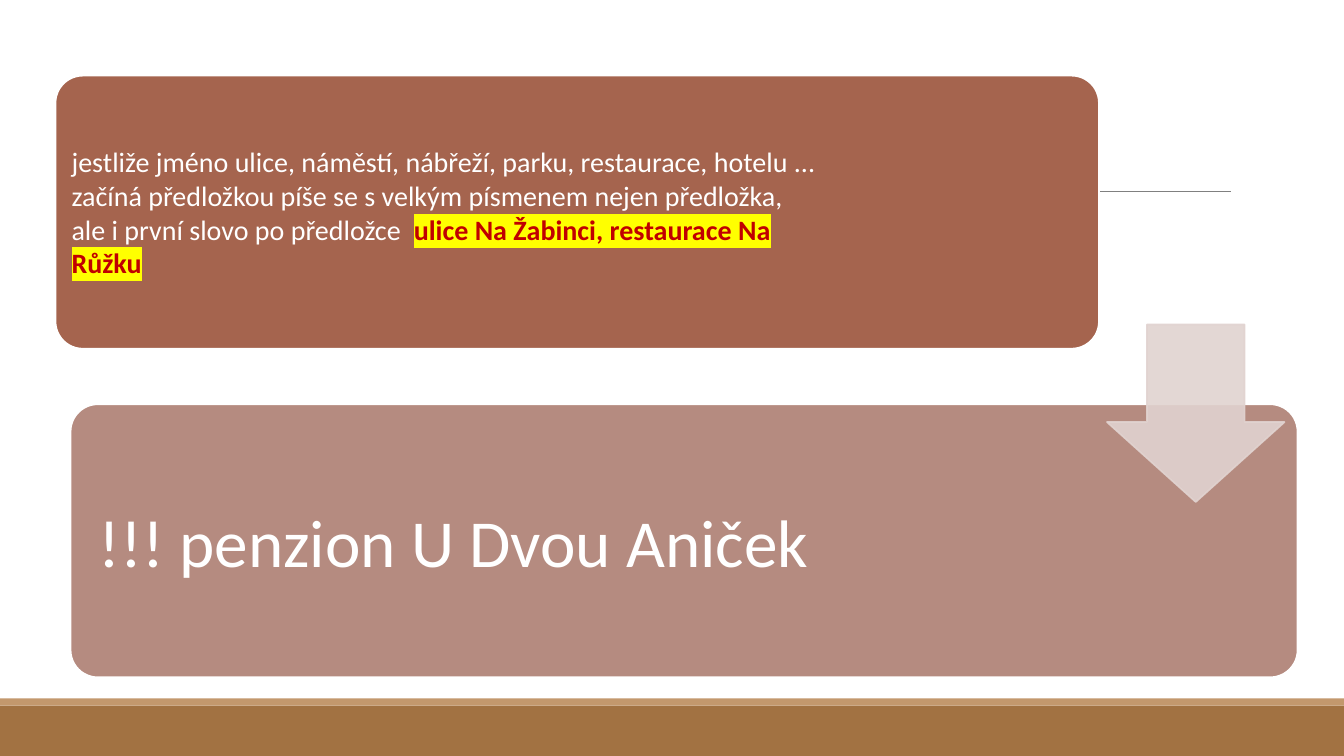
from lxml import etree
from pptx import Presentation
from pptx.dml import color
from pptx.enum import shapes, text
from pptx.oxml import ns
from pptx.util import Inches, Pt


def rgb(code):
    return color.RGBColor.from_string(code)


def style(run, size, code="FFFFFF", bold=False):
    run.font.name = "Calibri"
    run.font.size = Pt(size)
    run.font.bold = bold
    run.font.color.rgb = rgb(code)


deck = Presentation()
deck.slide_width, deck.slide_height = Inches(13.33), Inches(7.5)
slide = deck.slides.add_slide(deck.slide_layouts[6])
kind = shapes.MSO_SHAPE

# Footer bands and rule
for top, height, code in [(7, 0.5, "A27242"), (6.93, 0.07, "C3986D")]:
    band = slide.shapes.add_shape(
        kind.RECTANGLE, 0, Inches(top), deck.slide_width, Inches(height))
    band.shadow.inherit = False
    band.fill.solid()
    band.fill.fore_color.rgb = rgb(code)
    band.line.fill.background()

rule = slide.shapes.add_connector(
    shapes.MSO_CONNECTOR.STRAIGHT,
    Inches(1.31), Inches(1.9), Inches(12.21), Inches(1.9))
rule.line.color.rgb = rgb("808080")
rule.line.width = Pt(0.5)
etree.SubElement(rule.element.spPr, ns.qn("a:effectLst"))

# Cards: left, top, width, fill, text width, inset, size, plain and marked text
cards = [
    (0.55, 0.75, 10.35, "A5644E", 7.55, 0.08, 20,
     "jestliže jméno ulice, náměstí, nábřeží, parku, restaurace, hotelu ... "
     "začíná předložkou píše se s velkým písmenem nejen předložka, "
     "ale i první slovo po předložce  ",
     "ulice Na Žabinci, restaurace Na Růžku"),
    (0.7, 4.01, 12.17, "B58B80", 7.8, 0.2, 48,
     "!!! penzion U Dvou Aniček", ""),
]
for left, top, width, code, span, inset, size, plain, marked in cards:
    card = slide.shapes.add_shape(
        kind.ROUNDED_RECTANGLE,
        Inches(left), Inches(top), Inches(width), Inches(2.71))
    card.adjustments[0] = 0.1
    card.shadow.inherit = False
    card.fill.solid()
    card.fill.fore_color.rgb = rgb(code)
    card.line.color.rgb = rgb("FFFFFF")
    card.line.width = Pt(1.25)

    box = slide.shapes.add_textbox(
        Inches(left + 0.08), Inches(top + 0.08), Inches(span), Inches(2.55))
    frame = box.text_frame
    frame.word_wrap = True
    frame.vertical_anchor = text.MSO_ANCHOR.MIDDLE
    frame.margin_left = frame.margin_right = Inches(inset)
    frame.margin_top = frame.margin_bottom = Inches(inset)
    para = frame.paragraphs[0]
    para.text = plain
    style(para.runs[0], size)
    if marked:
        run = para.add_run()
        run.text = marked
        style(run, size, "C00000", True)
        glow = etree.Element(ns.qn("a:highlight"))
        etree.SubElement(glow, ns.qn("a:srgbClr"), val="FFFF00")
        run.font._element.find(ns.qn("a:solidFill")).addnext(glow)

# Arrow between the cards
arrow = slide.shapes.add_shape(
    kind.DOWN_ARROW, Inches(10.98), Inches(3.22), Inches(1.76), Inches(1.76))
arrow.adjustments[0] = 0.55
arrow.adjustments[1] = 0.45
arrow.shadow.inherit = False
arrow.fill.solid()
arrow.fill.fore_color.rgb = rgb("E1D3D0")
arrow.line.color.rgb = rgb("E1D3D0")
arrow.line.width = Pt(1.25)
for tint in arrow.element.spPr.iter(ns.qn("a:srgbClr")):
    etree.SubElement(tint, ns.qn("a:alpha"), val="90000")

deck.save("out.pptx")
